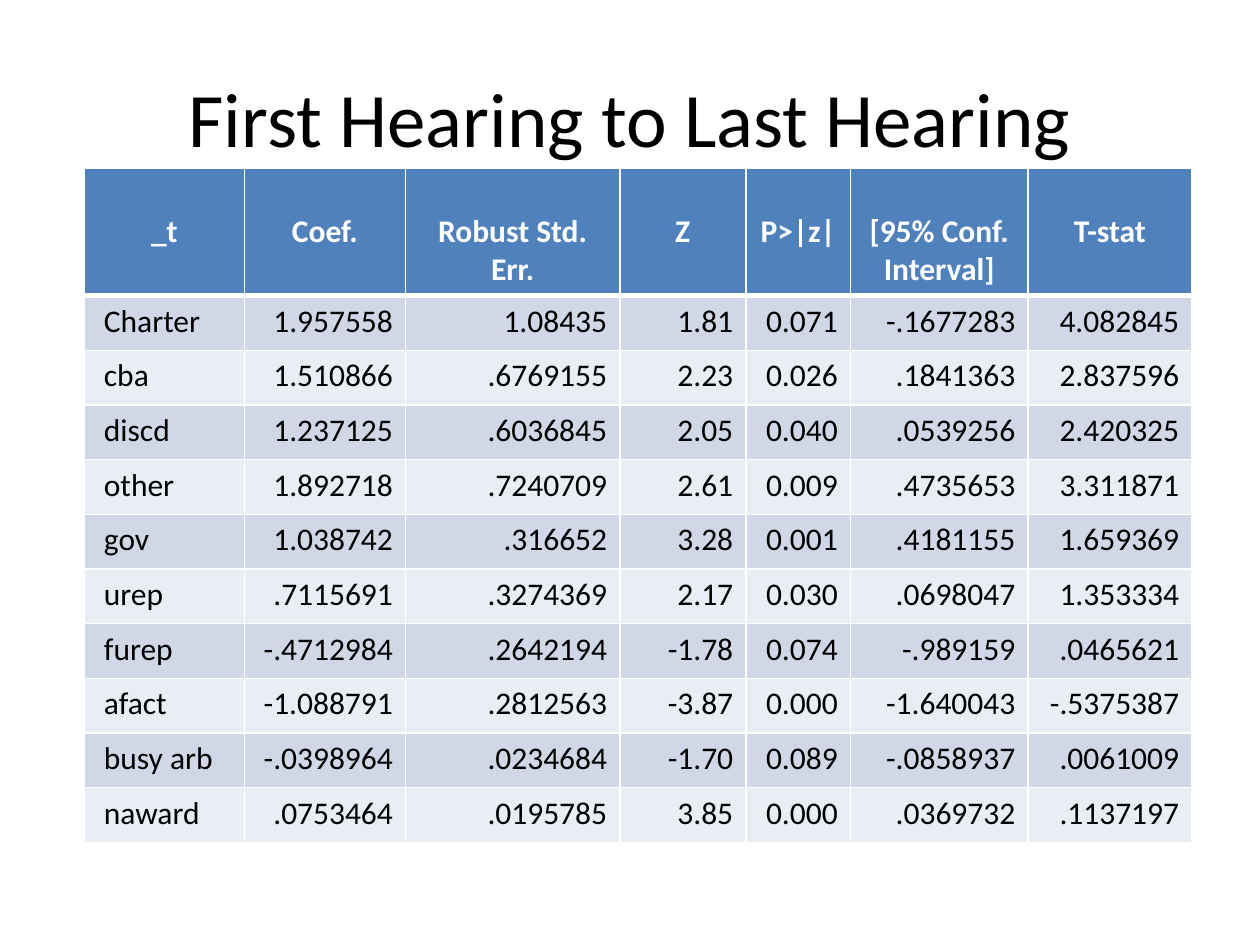
from lxml.etree import SubElement
from pptx import Presentation
from pptx.dml.color import RGBColor
from pptx.enum.text import MSO_ANCHOR as Anchor, PP_ALIGN as Align
from pptx.oxml.ns import qn
from pptx.util import Pt

WHITE = RGBColor(0xFF, 0xFF, 0xFF)
BLACK = RGBColor(0x00, 0x00, 0x00)
HEADER_BLUE = RGBColor(0x4F, 0x81, 0xBD)
BAND_DARK = RGBColor(0xD0, 0xD8, 0xE8)
BAND_LIGHT = RGBColor(0xE9, 0xED, 0xF4)

HEADINGS = ["_t", "Coef.", "Robust Std. Err.", "Z", "P>|z|", "[95% Conf. Interval]", "T-stat"]
ESTIMATES = [
    ["Charter", "1.957558", "1.08435", "1.81", "0.071", "-.1677283", "4.082845"],
    ["cba", "1.510866", ".6769155", "2.23", "0.026", ".1841363", "2.837596"],
    ["discd", "1.237125", ".6036845", "2.05", "0.040", ".0539256", "2.420325"],
    ["other", "1.892718", ".7240709", "2.61", "0.009", ".4735653", "3.311871"],
    ["gov", "1.038742", ".316652", "3.28", "0.001", ".4181155", "1.659369"],
    ["urep", ".7115691", ".3274369", "2.17", "0.030", ".0698047", "1.353334"],
    ["furep", "-.4712984", ".2642194", "-1.78", "0.074", "-.989159", ".0465621"],
    ["afact", "-1.088791", ".2812563", "-3.87", "0.000", "-1.640043", "-.5375387"],
    ["busy arb", "-.0398964", ".0234684", "-1.70", "0.089", "-.0858937", ".0061009"],
    ["naward", ".0753464", ".0195785", "3.85", "0.000", ".0369732", ".1137197"],
]
COLUMN_WIDTHS = [91.4, 92.2, 122.4, 72, 59.8, 101.5, 93.6]
HEADER_HEIGHT, ROW_HEIGHT = 73, 31.25


def apply(target, values):
    for name, value in values.items():
        setattr(target, name, value)


def add_border(cell, side, width):
    line = SubElement(cell._tc.get_or_add_tcPr(), qn(f"a:ln{side}"), w=str(Pt(width)))
    fill = SubElement(line, qn("a:solidFill"))
    SubElement(fill, qn("a:srgbClr"), val=str(WHITE))


prs = Presentation()
apply(prs, {"slide_width": Pt(720), "slide_height": Pt(540)})
slide = prs.slides.add_slide(prs.slide_layouts[5])

heading = slide.shapes.title
apply(heading, {"left": Pt(36), "top": Pt(21.6), "width": Pt(648), "height": Pt(90)})
heading.text_frame.text = "First Hearing to Last Hearing"
heading.text_frame.vertical_anchor = Anchor.MIDDLE
heading_line = heading.text_frame.paragraphs[0]
heading_line.alignment = Align.CENTER
apply(heading_line.font, {"size": Pt(44), "name": "Calibri"})
heading_line.font.color.rgb = BLACK

rows = [HEADINGS] + ESTIMATES
regression = slide.shapes.add_table(
    len(rows), len(HEADINGS), Pt(48.2), Pt(96),
    Pt(sum(COLUMN_WIDTHS)), Pt(HEADER_HEIGHT + ROW_HEIGHT * len(ESTIMATES))).table
for column, width in zip(regression.columns, COLUMN_WIDTHS):
    column.width = Pt(width)

for r, values in enumerate(rows):
    is_header = r == 0
    regression.rows[r].height = Pt(HEADER_HEIGHT if is_header else ROW_HEIGHT)
    band = HEADER_BLUE if is_header else BAND_DARK if r % 2 else BAND_LIGHT
    for c, value in enumerate(values):
        cell = regression.cell(r, c)
        for side in "LRTB":
            under_header = (r, side) in [(0, "B"), (1, "T")]
            add_border(cell, side, 3 if under_header else 1)
        cell.fill.solid()
        cell.fill.fore_color.rgb = band
        cell.text = value
        estimate = cell.text_frame.paragraphs[0]
        if is_header:
            estimate.alignment = Align.CENTER
            cell.margin_top = Pt(25.4)
        elif c == 0:
            estimate.alignment = Align.LEFT
            cell.margin_left = Pt(11.2)
        else:
            estimate.alignment = Align.RIGHT
        apply(estimate.font, {"size": Pt(18), "name": "Calibri", "bold": is_header})
        estimate.font.color.rgb = WHITE if is_header else BLACK

prs.save("out.pptx")
